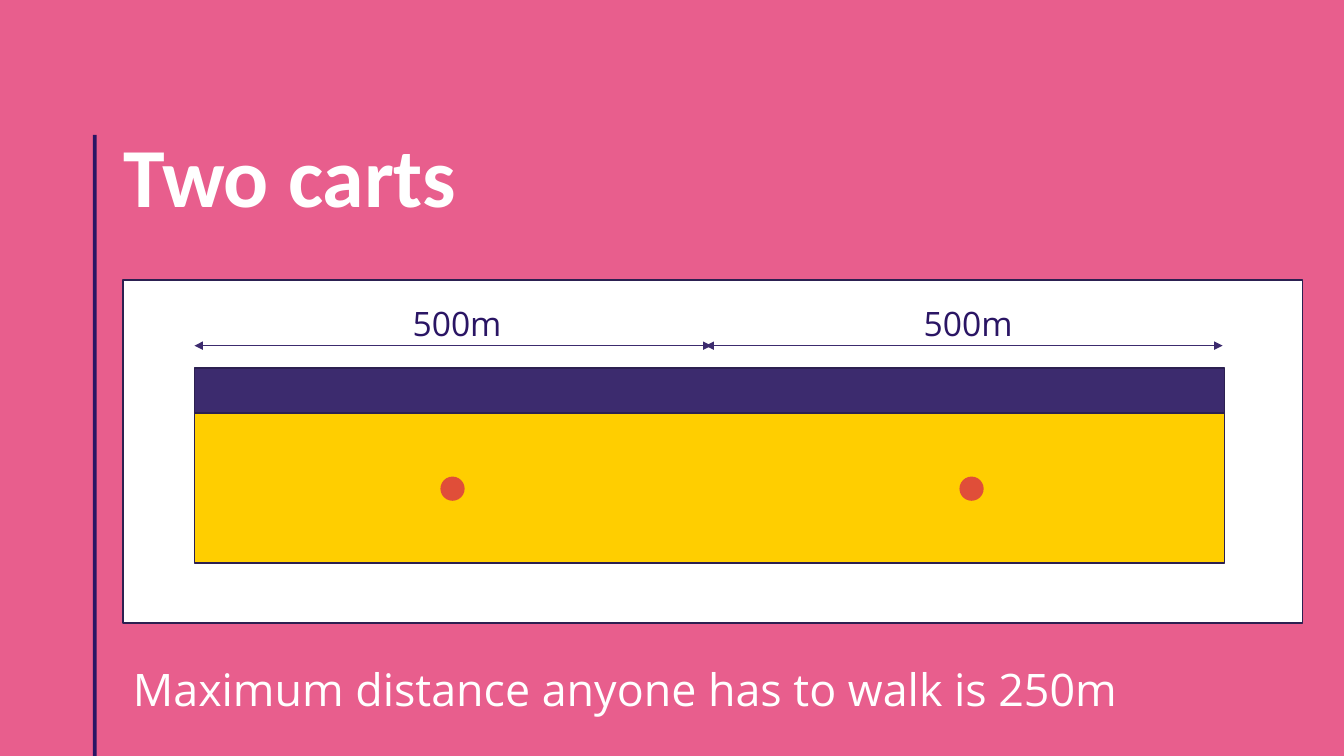
from pptx import Presentation
from pptx import util as u
from pptx.dml.color import RGBColor
from pptx.enum import shapes, text
from pptx.oxml.ns import qn
from lxml import etree

PINK = RGBColor(0xE8, 0x5E, 0x8D)
WHITE = RGBColor(0xFF, 0xFF, 0xFF)
NAVY = RGBColor(0x2A, 0x15, 0x64)
OUTLINE = RGBColor(0x2C, 0x20, 0x51)
PURPLE = RGBColor(0x3C, 0x2B, 0x6E)
YELLOW = RGBColor(0xFF, 0xCE, 0x00)
RED = RGBColor(0xE0, 0x4E, 0x39)

RECT = shapes.MSO_SHAPE.RECTANGLE
OVAL = shapes.MSO_SHAPE.OVAL


class Deck:
    title_font = {"name": "Calibri", "size": u.Pt(60), "bold": True}
    body_font = {"name": "Open Sans", "bold": False}

    def __init__(self, width, height, background):
        self.prs = Presentation()
        self.prs.slide_width, self.prs.slide_height = u.Cm(width), u.Cm(height)
        self.slide = self.prs.slides.add_slide(self.prs.slide_layouts[5])
        fill = self.slide.background.fill
        fill.solid()
        fill.fore_color.rgb = background

    def set_words(self, holder, words, font, color, align, margins, spacing):
        frame = holder.text_frame
        layout = {"word_wrap": True, "auto_size": text.MSO_AUTO_SIZE.NONE,
                  "vertical_anchor": text.MSO_ANCHOR.TOP}
        sides = ("margin_left", "margin_top", "margin_right", "margin_bottom")
        layout.update(zip(sides, map(u.Cm, margins)))
        for key, value in layout.items():
            setattr(frame, key, value)
        paragraph = frame.paragraphs[0]
        paragraph.text = words
        paragraph.alignment = align
        paragraph.line_spacing = spacing
        run = paragraph.runs[0]
        for key, value in font.items():
            setattr(run.font, key, value)
        run.font.color.rgb = color

    def title(self, words, *box):
        holder = self.slide.shapes.title
        for key, value in zip(("left", "top", "width", "height"), box):
            setattr(holder, key, u.Cm(value))
        self.set_words(holder, words, self.title_font, WHITE,
                       text.PP_ALIGN.LEFT, (0, 0, 0, 0), 0.9)

    def label(self, words, size, color, *box, align=text.PP_ALIGN.LEFT,
              margins=(0, 0, 0, 0), spacing=0.9):
        holder = self.slide.shapes.add_textbox(*map(u.Cm, box))
        font = {**self.body_font, "size": u.Pt(size)}
        self.set_words(holder, words, font, color, align, margins, spacing)

    def block(self, kind, color, *box, outline=None):
        shape = self.slide.shapes.add_shape(kind, *map(u.Cm, box))
        shape.shadow.inherit = False
        shape.fill.solid()
        shape.fill.fore_color.rgb = color
        if outline is None:
            shape.line.fill.background()
        else:
            shape.line.color.rgb = outline
            shape.line.width = u.Pt(1)

    def double_arrow(self, left, y, length):
        arrow = self.slide.shapes.add_connector(
            shapes.MSO_CONNECTOR.STRAIGHT, *map(u.Cm, (left, y, left + length, y)))
        arrow.line.color.rgb = PURPLE
        arrow.line.width = u.Pt(0.5)
        properties = arrow.element.spPr
        for end in ("a:headEnd", "a:tailEnd"):
            etree.SubElement(properties.find(qn("a:ln")), qn(end), type="triangle")
        etree.SubElement(properties, qn("a:effectLst"))


def main():
    deck = Deck(33.87, 19.05, PINK)

    # Side rule and heading
    deck.block(RECT, NAVY, 2.34, 3.4, 0.1, 15.65)
    deck.title("Two carts", 3.1, 3.4, 29.21, 3.25)

    # Beach diagram: panel, sea and sand
    deck.block(RECT, WHITE, 3.1, 7.06, 29.72, 8.64, outline=OUTLINE)
    deck.block(RECT, PURPLE, 4.9, 9.27, 25.96, 4.67, outline=OUTLINE)
    deck.block(RECT, YELLOW, 4.9, 10.41, 25.96, 3.78, outline=OUTLINE)

    # Each half of the beach: its length and its cart
    for half in range(2):
        shift = 12.88 * half
        deck.double_arrow(4.9 + shift, 8.71, 13.03)
        deck.label("500m", 24, NAVY, 7.47 + shift, 7.75, 8.1, 1.47,
                   align=text.PP_ALIGN.CENTER)
        deck.block(OVAL, RED, 11.1 + 13.08 * half, 12.01, 0.61, 0.61)

    # Conclusion
    deck.label("Maximum distance anyone has to walk is 250m", 32, WHITE,
               3.1, 16.54, 27.05, 1.8, margins=(0.25, 0.13, 0.25, 0.13), spacing=1.0)

    deck.prs.save("out.pptx")


if __name__ == "__main__":
    main()
